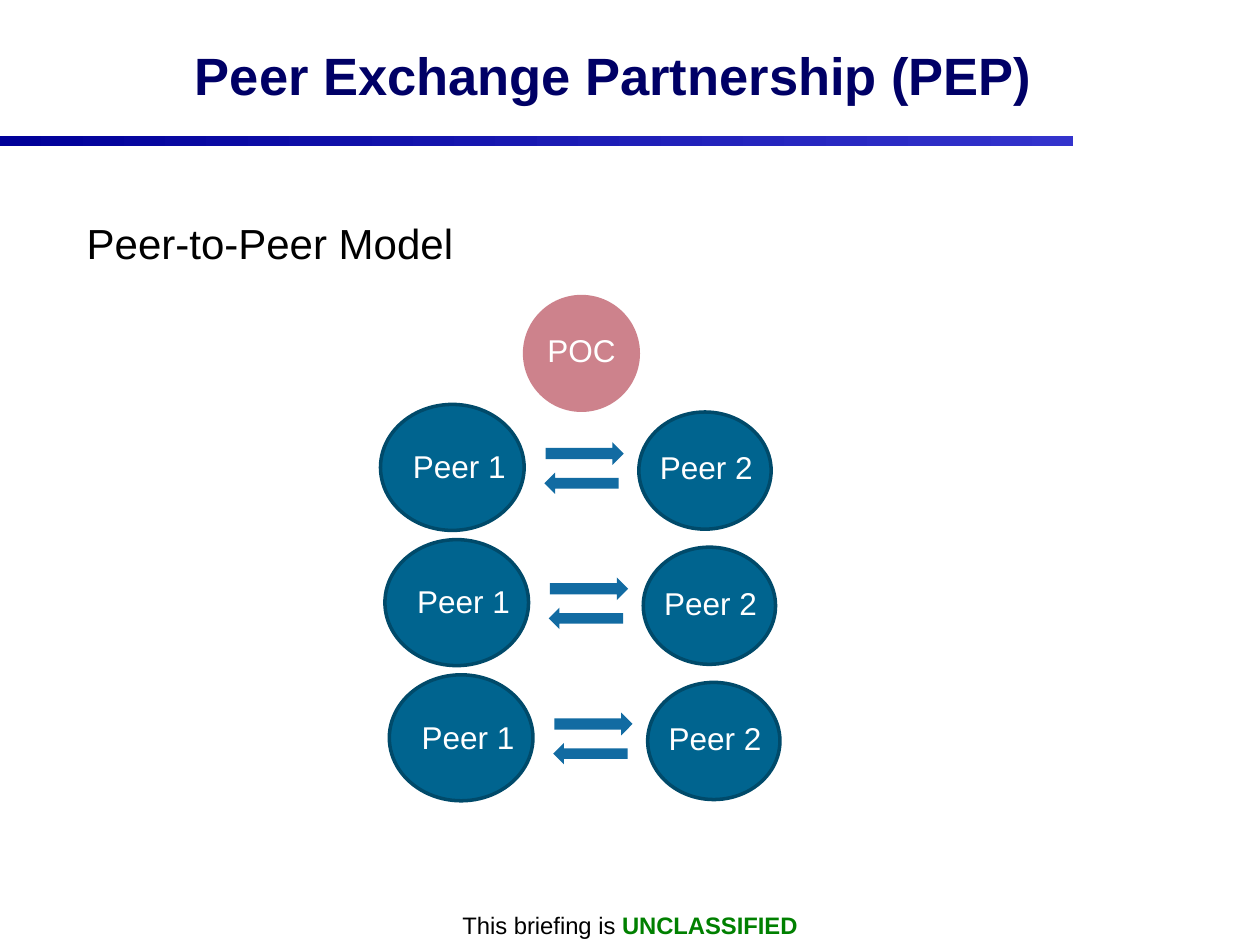
from lxml import etree
from pptx import Presentation
from pptx.dml.color import RGBColor
from pptx.enum.shapes import MSO_SHAPE
from pptx.enum.text import MSO_ANCHOR, PP_ALIGN
from pptx.oxml.ns import qn
from pptx.util import Inches, Pt

NAVY = RGBColor(0x00, 0x00, 0x66)
BAR_DARK = RGBColor(0x00, 0x00, 0x99)
BAR_LIGHT = RGBColor(0x33, 0x33, 0xCC)
ROSE = RGBColor(0xA1, 0x11, 0x24)
TEAL = RGBColor(0x00, 0x64, 0x8F)
TEAL_DARK = RGBColor(0x00, 0x4A, 0x6A)
ARROW_BLUE = RGBColor(0x12, 0x6B, 0xA2)
GREEN = RGBColor(0x00, 0x80, 0x00)
BLACK = RGBColor(0, 0, 0)
WHITE = RGBColor(0xFF, 0xFF, 0xFF)

# Content: boxes are left, top, width, height in inches
TITLE = ("Peer Exchange Partnership (PEP)", (1.08, 0.18, 7.58, 0.82))
SUBTITLE = ("Peer-to-Peer Model", (0.59, 1.68, 4.26, 0.5))
POC = ("POC", (4.15, 2.34, 0.93, 0.93), (4.15, 2.58, 0.93, 0.4))
FOOTER = (("This briefing is ", BLACK, False), ("UNCLASSIFIED", GREEN, True))

# First peer row; each later row is shifted by ROW_STEP
PEERS = [
    ("Peer 2", (5.07, 3.27, 1.05, 0.93), (5.01, 3.51, 1.19, 0.4)),
    ("Peer 1", (3.02, 3.21, 1.14, 1), (2.98, 3.5, 1.33, 0.4)),
]
ARROWS = [(90, (4.55, 3.29, 0.18, 0.62)), (270, (4.53, 3.54, 0.17, 0.59))]
ROWS = 3
ROW_STEP = (0.035, 1.073)


def shifted(box, row):
    x, y, w, h = box
    return x + row * ROW_STEP[0], y + row * ROW_STEP[1], w, h


def add_shape(kind, box, color=None, line=None):
    sp = s.shapes.add_shape(kind, *map(Inches, box))
    sp.shadow.inherit = False
    if color is not None:
        sp.fill.solid()
        sp.fill.fore_color.rgb = color
    if line is None:
        sp.line.fill.background()
    else:
        sp.line.color.rgb = line
        sp.line.width = Pt(2)
    return sp


def add_text(text, box, size, color, align=PP_ALIGN.CENTER,
             anchor=MSO_ANCHOR.MIDDLE, bold=False):
    tf = s.shapes.add_textbox(*map(Inches, box)).text_frame
    tf.word_wrap = True
    tf.vertical_anchor = anchor
    p = tf.paragraphs[0]
    p.text = text
    p.alignment = align
    p.font.name = "Arial"
    p.font.size = Pt(size)
    p.font.bold = bold
    p.font.color.rgb = color
    return tf


prs = Presentation()
prs.slide_width, prs.slide_height = Inches(10), Inches(7.5)
s = prs.slides.add_slide(prs.slide_layouts[6])

# Title, gradient rule and subtitle
bar = add_shape(MSO_SHAPE.RECTANGLE, (0, 1.08, 8.52, 0.08))
bar.fill.gradient()
bar.fill.gradient_angle = 0
for stop, color in zip(bar.fill.gradient_stops, (BAR_DARK, BAR_LIGHT)):
    stop.color.rgb = color
add_text(*TITLE, 30, NAVY, bold=True)
add_text(*SUBTITLE, 24, BLACK, PP_ALIGN.LEFT, MSO_ANCHOR.TOP)

# Translucent point-of-contact circle
label, circle_box, label_box = POC
circle = add_shape(MSO_SHAPE.OVAL, circle_box, ROSE)
rgb = circle.fill._xPr.find(qn("a:solidFill"))[0]
etree.SubElement(rgb, qn("a:alpha")).set("val", "52000")
add_text(label, label_box, 18, WHITE)

# Peer pairs with arrows both ways
for row in range(ROWS):
    for label, oval_box, label_box in PEERS:
        add_shape(MSO_SHAPE.OVAL, shifted(oval_box, row), TEAL, TEAL_DARK)
        add_text(label, shifted(label_box, row), 18, WHITE)
    for angle, box in ARROWS:
        arrow = add_shape(MSO_SHAPE.UP_ARROW, shifted(box, row), ARROW_BLUE)
        arrow.rotation = angle

# Classification footer
tf = add_text("", (2.52, 7.19, 4.96, 0.31), 13.6, BLACK, anchor=MSO_ANCHOR.TOP)
tf.margin_left = tf.margin_right = Inches(0.08)
tf.margin_top = tf.margin_bottom = Inches(0.04)
for text, color, bold in FOOTER:
    r = tf.paragraphs[0].add_run()
    r.text = text
    r.font.color.rgb = color
    r.font.bold = bold

prs.save("out.pptx")
